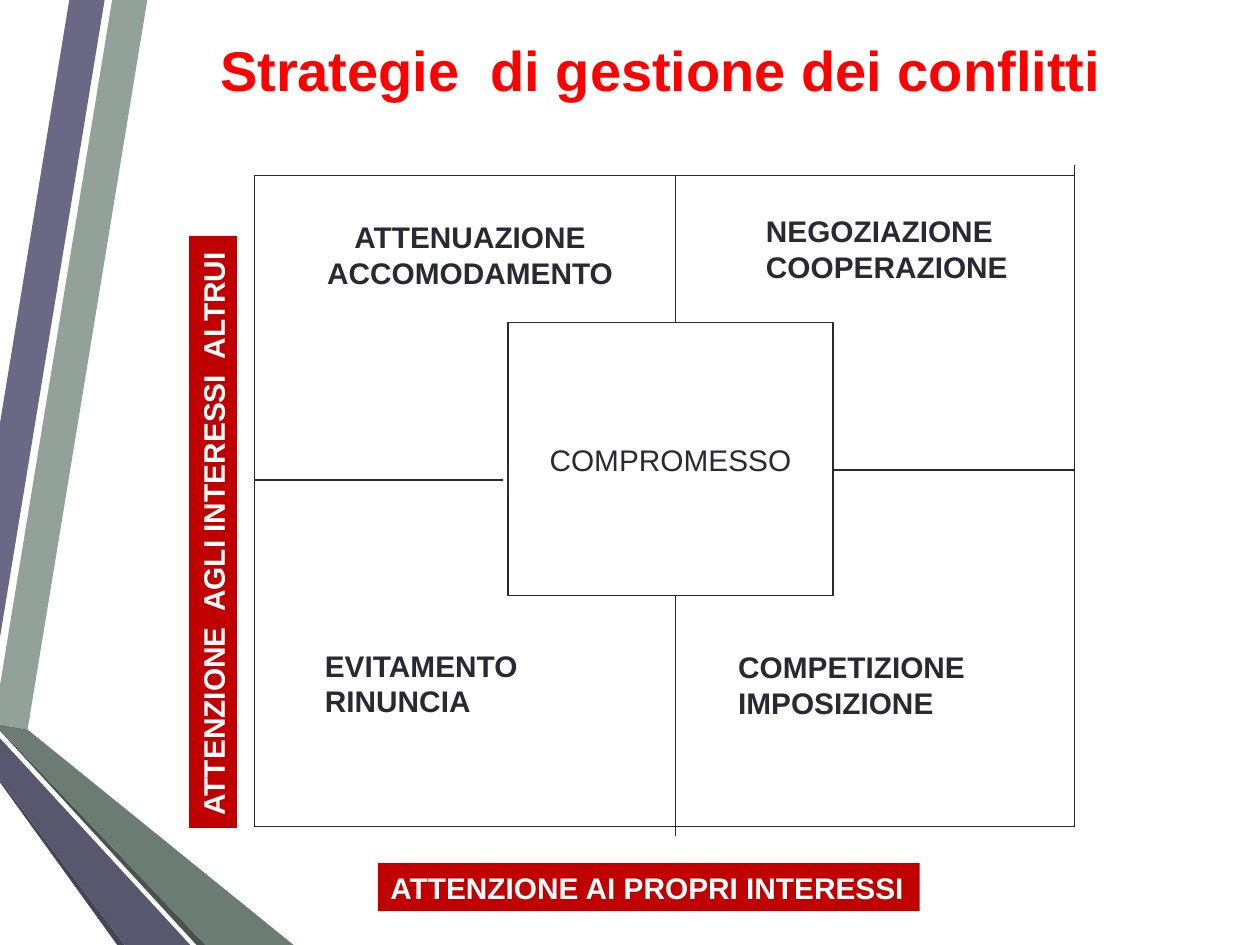
import pptx
import pptx.util
import pptx.dml.color
import pptx.enum.shapes
import pptx.enum.text
import pptx.oxml.ns
import lxml.etree

Pt = pptx.util.Pt
Align = pptx.enum.text.PP_ALIGN
Size = pptx.enum.text.MSO_AUTO_SIZE

HEX = {
    "sage": "93A299", "plum": "696986", "night": "454557", "moss": "47534C",
    "green": "6B7D72", "slate": "57576E", "ink": "292934", "white": "FFFFFF",
    "brick": "C00000", "red": "FF0000",
}

# Ribbons on the left edge, back to front
RIBBONS = [
    ("sage", [(0, 391.7), (0, 414), (15.8, 416.9), (84.2, 0), (64.1, 0)]),
    ("plum", [(59.8, 0), (39.6, 0), (0, 241.9), (0, 364.3)]),
    ("night", [(0, 445.7), (0, 447.1), (67, 540), (71.3, 540)]),
    ("moss", [(0, 416.9), (0, 417.6), (112.3, 540), (117.4, 540)]),
    ("green", [(0, 416.9), (117.4, 540), (167.8, 540), (15.8, 416.9), (0, 414)]),
    ("slate", [(0, 445.7), (71.3, 540), (108.7, 540), (0, 421.9)]),
]

# Matrix frame and the box over its centre
LEFT, MID, RIGHT = 145.4, 385.9, 614.2
TOP, BASE = 100.1, 472.3
BOX = (290.2, 184.3, 185.8, 156.2)
BOX_END, BOX_BASE = BOX[0] + BOX[2], BOX[1] + BOX[3]
LINES = [
    (LEFT, TOP, LEFT, BASE),
    (LEFT, BASE, RIGHT, BASE),
    (MID, BOX_BASE, MID, 478),
    (LEFT, 274.3, 287.3, 274.3),
    (MID, TOP, MID, BOX[1]),
    (BOX_END, 268.6, RIGHT, 268.6),
    (RIGHT, 94.3, RIGHT, BASE),
    (LEFT, TOP, RIGHT, TOP),
]

# Axis labels: text, place, turn
AXES = [
    ("ATTENZIONE  AGLI INTERESSI  ALTRUI", (-47.5, 290.2, 338.4, 27.4), 270),
    ("ATTENZIONE AI PROPRI INTERESSI", (216, 493.2, 309.6, 27.4), 0),
]

# Strategies: lines, place, alignment
CELLS = [
    (["ATTENUAZIONE", "ACCOMODAMENTO"], (179.3, 121.7, 178.6, 48.2), Align.CENTER),
    (["EVITAMENTO", "RINUNCIA"], (178.6, 366.5, 124.6, 48.2), Align.LEFT),
    (["COMPETIZIONE", "IMPOSIZIONE"], (414.7, 367.2, 144.7, 48.2), Align.LEFT),
    (["NEGOZIAZIONE", "COOPERAZIONE"], (430.6, 118.1, 153.4, 48.2), Align.LEFT),
]


def rgb(name):
    return pptx.dml.color.RGBColor.from_string(HEX[name])


def paint(shape, fill, line=None):
    shape.shadow.inherit = False
    shape.fill.solid()
    shape.fill.fore_color.rgb = rgb(fill)
    if line:
        shape.line.color.rgb = rgb(line)
        shape.line.width = Pt(0.75)
    else:
        shape.line.fill.background()


def write(shape, rows, color, align, size=17, bold=True):
    frame = shape.text_frame
    frame.text = "\n".join(rows)
    for para in frame.paragraphs:
        para.alignment = align
        font = para.font
        font.name, font.size, font.bold = "Arial", Pt(size), bold
        font.color.rgb = rgb(color)
    return frame


def panel(place, rows, fill, color, align, line=None, bold=True):
    kind = pptx.enum.shapes.MSO_SHAPE.RECTANGLE
    shape = slide.shapes.add_shape(kind, *map(Pt, place))
    paint(shape, fill, line)
    frame = write(shape, rows, color, align, bold=bold)
    frame.word_wrap = False
    if line:
        frame.vertical_anchor = pptx.enum.text.MSO_ANCHOR.MIDDLE
    else:
        frame.vertical_anchor = pptx.enum.text.MSO_ANCHOR.TOP
        frame.auto_size = Size.SHAPE_TO_FIT_TEXT
    return shape


def rule(ends):
    kind = pptx.enum.shapes.MSO_CONNECTOR.STRAIGHT
    line = slide.shapes.add_connector(kind, *map(Pt, ends))
    line.line.color.rgb = rgb("ink")
    line.line.width = Pt(0.75)
    props = line._element.spPr
    lxml.etree.SubElement(props, pptx.oxml.ns.qn("a:effectLst"))


deck = pptx.Presentation()
deck.slide_width, deck.slide_height = Pt(720), Pt(540)
slide = deck.slides.add_slide(deck.slide_layouts[6])

# Ribbons
for color, points in RIBBONS:
    start, *rest = [(Pt(x), Pt(y)) for x, y in points]
    path = slide.shapes.build_freeform(*start)
    path.add_line_segments(rest, close=True)
    paint(path.convert_to_shape(), color)

# Matrix
for ends in LINES:
    rule(ends)
panel(BOX, ["COMPROMESSO"], "white", "ink", Align.CENTER, line="ink", bold=False)

# Labels
for text, place, turn in AXES:
    panel(place, [text], "brick", "white", Align.LEFT).rotation = turn
for rows, place, align in CELLS:
    panel(place, rows, "white", "ink", align)

# Title
title = slide.shapes.add_textbox(*map(Pt, (90, 16.6, 575.3, 45.4)))
frame = write(title, ["Strategie  di gestione dei conflitti"], "red", Align.CENTER, 32)
frame.word_wrap = True
frame.vertical_anchor = pptx.enum.text.MSO_ANCHOR.MIDDLE

deck.save("out.pptx")
